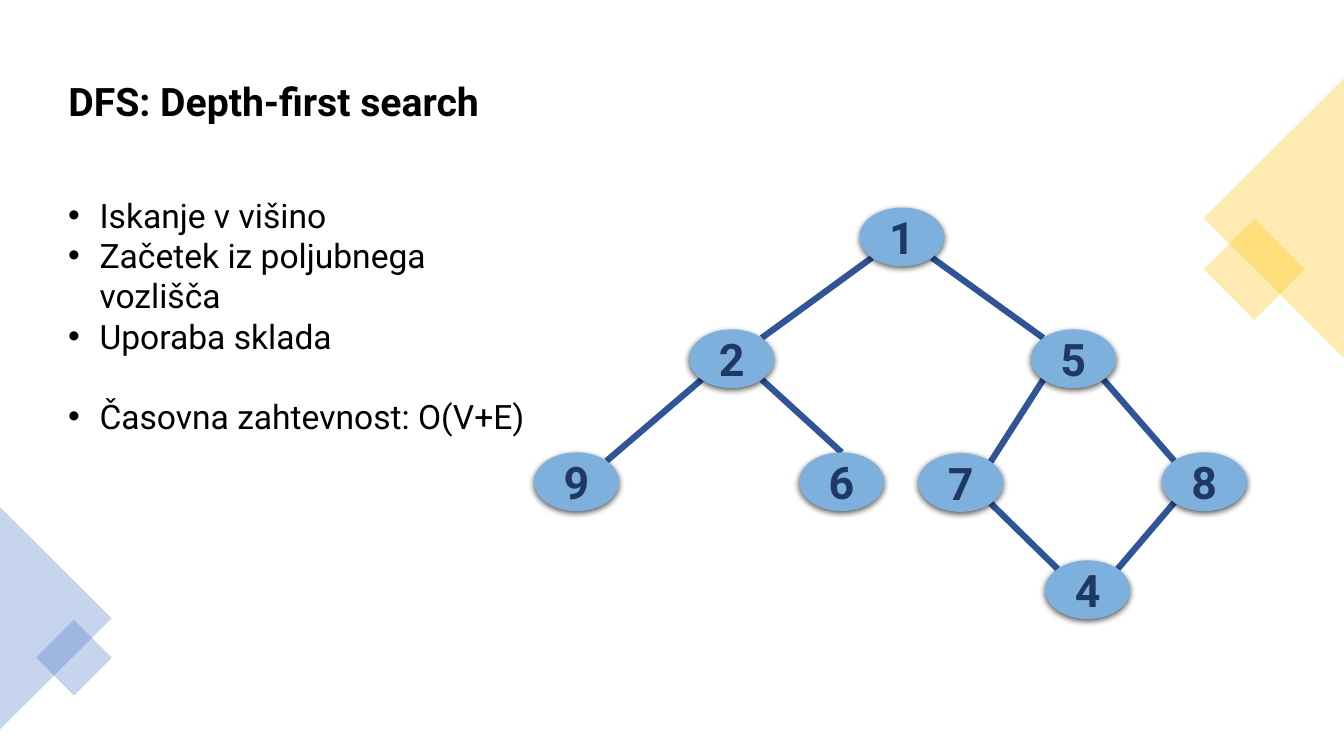
import math
import pptx
import pptx.dml.color
import pptx.enum.shapes
import pptx.enum.text
import pptx.oxml
import pptx.oxml.ns
import pptx.util

Cm, Pt = pptx.util.Cm, pptx.util.Pt
SHAPE = pptx.enum.shapes.MSO_SHAPE
ANCHOR = pptx.enum.text.MSO_ANCHOR
ALIGN = pptx.enum.text.PP_ALIGN
NS = pptx.oxml.ns.nsdecls("a")

FONT = "Roboto"
GOLD, BLUE = "FFC000", "4472C4"
NODE_W, NODE_H = 2.14, 1.48

# Centre of each node, in cm
NODES = {
    "1": (22.73, 5.97),
    "2": (18.44, 9.04), "5": (27.05, 9.04),
    "9": (14.53, 12.14), "6": (21.21, 12.14),
    "7": (24.21, 12.16), "8": (30.35, 12.14),
    "4": (27.41, 14.86),
}
EDGES = ["12", "15", "29", "26", "57", "58", "74", "84"]
TOP_ENDS = {"26"}  # edges that meet the lower node at its top

# Kind, left, top, width, height, turn, colour
DECOR = [
    (SHAPE.RECTANGLE, 30.71, 5.89, 1.8, 1.8, 45, GOLD),
    (SHAPE.ISOSCELES_TRIANGLE, 28.58, 3.73, 7.04, 3.53, 270, GOLD),
    (SHAPE.ISOSCELES_TRIANGLE, -1.4, 14.17, 5.61, 2.82, 90, BLUE),
    (SHAPE.RECTANGLE, 1.19, 15.9, 1.35, 1.35, 45, BLUE),
]

# Text and space before it, in points
POINTS = [
    ("Iskanje v višino", 0),
    ("Začetek iz poljubnega vozlišča", 0),
    ("Uporaba sklada", 0),
    ("Časovna zahtevnost: O(V+E)", 28.8),
]


def paint(color, hue):
    color.rgb = pptx.dml.color.RGBColor.from_string(hue)


def xml(text):
    return pptx.oxml.parse_xml(text)


def add_run(para, text, size, hue="000000", bold=False):
    run = para.add_run()
    run.text = text
    run.font.name = FONT
    run.font.size = Pt(size)
    run.font.bold = bold
    paint(run.font.color, hue)


def add_solid(slide, kind, left, top, width, height, hue):
    shape = slide.shapes.add_shape(kind, Cm(left), Cm(top), Cm(width), Cm(height))
    shape.shadow.inherit = False
    shape.fill.solid()
    paint(shape.fill.fore_color, hue)
    shape.line.fill.background()
    return shape


def add_decor(slide, kind, left, top, width, height, turn, hue):
    shape = add_solid(slide, kind, left, top, width, height, hue)
    shape.rotation = turn
    color = shape.fill._xPr.find(".//" + pptx.oxml.ns.qn("a:srgbClr"))
    color.append(xml(f'<a:alpha {NS} val="30000"/>'))


def set_title(slide, text):
    title = slide.shapes.title
    title.left, title.top = Cm(1.47), Cm(1.83)
    title.width, title.height = Cm(11), Cm(1.45)
    frame = title.text_frame
    frame.word_wrap = False
    frame.auto_size = pptx.enum.text.MSO_AUTO_SIZE.NONE
    frame.vertical_anchor = ANCHOR.TOP
    para = frame.paragraphs[0]
    para.alignment = ALIGN.LEFT
    add_run(para, text, 28, bold=True)


def add_list(slide, points):
    box = slide.shapes.add_textbox(Cm(1.47), Cm(4.78), Cm(12.29), Cm(5.38))
    frame = box.text_frame
    frame.word_wrap = True
    for i, (text, gap) in enumerate(points):
        para = frame.add_paragraph() if i else frame.paragraphs[0]
        para.space_before = Pt(gap)
        props = para._p.get_or_add_pPr()
        props.set("marL", str(Cm(0.79)))
        props.set("indent", str(-Cm(0.79)))
        props.append(xml(f'<a:buFont {NS} typeface="Arial"/>'))
        props.append(xml(f'<a:buChar {NS} char="•"/>'))
        add_run(para, text, 24)


def add_edge(slide, edge):
    (x1, y1), (x2, y2) = (NODES[name] for name in edge)
    # Edges meet the ellipses at their diagonal points
    dx = math.copysign(NODE_W / 2 * math.sqrt(0.5), x2 - x1)
    dy = NODE_H / 2 * math.sqrt(0.5)
    end = (x2, y2 - NODE_H / 2) if edge in TOP_ENDS else (x2 - dx, y2 - dy)
    line = slide.shapes.add_connector(
        pptx.enum.shapes.MSO_CONNECTOR.STRAIGHT,
        Cm(x1 + dx), Cm(y1 + dy), Cm(end[0]), Cm(end[1]))
    paint(line.line.color, "2F5597")
    line.line.width = Pt(4.5)
    line._element.spPr.append(xml(f"<a:effectLst {NS}/>"))


def add_node(slide, name, x, y):
    node = add_solid(slide, SHAPE.OVAL, x - NODE_W / 2, y - NODE_H / 2,
                     NODE_W, NODE_H, "7EB0DE")
    effects = node._element.spPr.find(pptx.oxml.ns.qn("a:effectLst"))
    effects.append(xml(
        f'<a:outerShdw {NS} blurRad="{Pt(4.5)}" dist="{Pt(1.5)}" dir="5400000" '
        'algn="ctr" rotWithShape="0"><a:srgbClr val="000000">'
        '<a:alpha val="63000"/></a:srgbClr></a:outerShdw>'))
    frame = node.text_frame
    frame.vertical_anchor = ANCHOR.MIDDLE
    para = frame.paragraphs[0]
    para.alignment = ALIGN.CENTER
    add_run(para, name, 32, "203864", True)


def main():
    deck = pptx.Presentation()
    deck.slide_width, deck.slide_height = Cm(33.87), Cm(19.05)
    slide = deck.slides.add_slide(deck.slide_layouts[5])

    # Corner shapes
    for item in DECOR:
        add_decor(slide, *item)

    # Text
    set_title(slide, "DFS: Depth-first search")
    add_list(slide, POINTS)

    # Graph: edges lie behind nodes
    for edge in EDGES:
        add_edge(slide, edge)
    for name, (x, y) in NODES.items():
        add_node(slide, name, x, y)

    deck.save("out.pptx")


if __name__ == "__main__":
    main()
